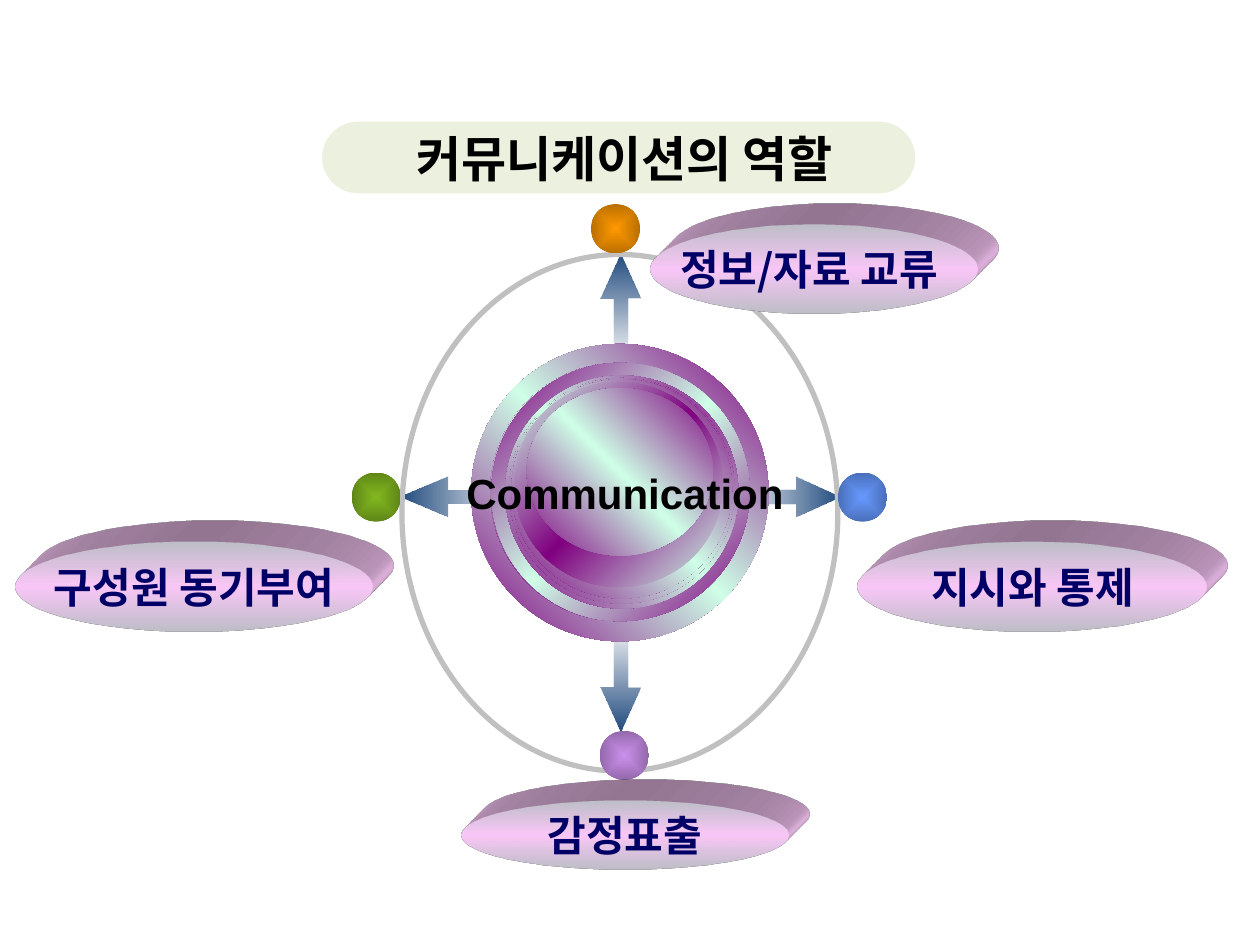
from lxml.etree import SubElement
from pptx import Presentation
from pptx.dml.color import RGBColor
from pptx.enum.shapes import MSO_SHAPE
from pptx.enum.text import MSO_ANCHOR, PP_ALIGN
from pptx.oxml import parse_xml
from pptx.oxml.ns import nsdecls, qn
from pptx.util import Inches, Pt

LATIN_FONT = "Arial"
KOREAN_FONT = "Noto Sans CJK KR"
WHITE = RGBColor(0xFF, 0xFF, 0xFF)
BLACK = RGBColor(0, 0, 0)
NAVY = RGBColor(0, 0, 0x66)
SILVER = RGBColor(0xC0, 0xC0, 0xC0)
PALE_GREEN = RGBColor(0xEB, 0xF1, 0xDE)
ARROW_START = RGBColor(0x1D, 0x45, 0x77)
ARROW_END = RGBColor(0x1F, 0x49, 0x7D)
PURPLE = RGBColor(0x80, 0, 0x80)
MINT = RGBColor(0xCF, 0xFF, 0xE7)
GRAY = RGBColor(0xBD, 0xBE, 0xC7)
PINK = RGBColor(0xF9, 0xC7, 0xF7)
LILAC = RGBColor(0xCB, 0x90, 0xEC)
DARK_LILAC = RGBColor(0x93, 0x68, 0xAB)
BLUE = RGBColor(0x66, 0x99, 0xFF)
DARK_BLUE = RGBColor(0x4A, 0x6F, 0xB9)
ORANGE = RGBColor(0xFF, 0x99, 0)
DARK_ORANGE = RGBColor(0xB9, 0x6F, 0)
GREEN = RGBColor(0x82, 0xB8, 0x20)
DARK_GREEN = RGBColor(0x5E, 0x85, 0x17)


def add_plain(shapes, preset, left, top, width, height):
    shape = shapes.add_shape(
        preset, Inches(left), Inches(top), Inches(width), Inches(height)
    )
    shape.shadow.inherit = False
    shape.fill.background()
    shape.line.fill.background()
    return shape


def fill_gradient(shape, colors, angle=None, clear_start=False):
    stops = ""
    for index, color in enumerate(colors):
        alpha = '<a:alpha val="0"/>' if clear_start and index == 0 else ""
        position = 100000 * index // (len(colors) - 1)
        stops += f'<a:gs pos="{position}"><a:srgbClr val="{color}">{alpha}</a:srgbClr></a:gs>'
    if angle is None:
        course = (
            '<a:path path="shape"><a:fillToRect l="50000" t="50000" '
            'r="50000" b="50000"/></a:path>'
        )
    else:
        course = f'<a:lin ang="{angle * 60000}" scaled="1"/>'
    gradient = parse_xml(
        f'<a:gradFill {nsdecls("a")} rotWithShape="1">'
        f"<a:gsLst>{stops}</a:gsLst>{course}</a:gradFill>"
    )
    properties = shape._element.spPr
    properties.replace(properties.find(qn("a:noFill")), gradient)


def extrude(shape, color):
    properties = shape._element.spPr
    properties.append(parse_xml(
        f'<a:scene3d {nsdecls("a")}><a:camera prst="legacyObliqueTopRight"/>'
        '<a:lightRig rig="legacyFlat3" dir="b"/></a:scene3d>'
    ))
    properties.append(parse_xml(
        f'<a:sp3d {nsdecls("a")} extrusionH="430200" prstMaterial="legacyMatte">'
        '<a:bevelT w="13500" h="13500" prst="angle"/>'
        '<a:bevelB w="13500" h="13500" prst="angle"/>'
        f'<a:extrusionClr><a:srgbClr val="{color}"/></a:extrusionClr></a:sp3d>'
    ))


def write_text(shape, text, size, color, font_name, anchor=MSO_ANCHOR.MIDDLE):
    frame = shape.text_frame
    frame.word_wrap = False
    frame.vertical_anchor = anchor
    paragraph = frame.paragraphs[0]
    paragraph.text = text
    paragraph.alignment = PP_ALIGN.CENTER
    font = paragraph.font
    font.size, font.bold, font.name = Pt(size), True, font_name
    font.color.rgb = color
    SubElement(font._rPr, qn("a:ea"), typeface=font_name)


def add_arrows(shapes, left, top):
    for dx, dy, length, rotation in (
        (1.3, 0.27, 0.87, 270),
        (1.3, 3.19, 0.87, 90),
        (2.61, 1.76, 0.87, 0),
        (-0.02, 1.76, 0.94, 180),
    ):
        arrow = add_plain(
            shapes, MSO_SHAPE.RIGHT_ARROW, left + dx, top + dy, length, 0.32
        )
        arrow.adjustments[0] = 0.35
        arrow.adjustments[1] = 1.11 * length / 0.87
        arrow.rotation = rotation
        fill_gradient(arrow, (ARROW_START, ARROW_END), 0, clear_start=True)


def add_orbit(shapes, left, top, width, height):
    add_arrows(shapes, left, top)
    orbit = add_plain(shapes, MSO_SHAPE.OVAL, left, top, width, height)
    orbit.line.color.rgb = SILVER
    orbit.line.width = Pt(3)
    for dx, dy, center, edge in (
        (1.57, 3.78, LILAC, DARK_LILAC),
        (3.46, 1.73, BLUE, DARK_BLUE),
        (1.5, -0.4, ORANGE, DARK_ORANGE),
        (-0.4, 1.73, GREEN, DARK_GREEN),
    ):
        dot = add_plain(shapes, MSO_SHAPE.OVAL, left + dx, top + dy, 0.39, 0.39)
        fill_gradient(dot, (center, edge))


def add_dial(shapes, left, top, text):
    dial = shapes.add_group_shape().shapes
    mint_band = (PURPLE, MINT, PURPLE)
    purple_band = (MINT, PURPLE, MINT)
    for dx, dy, width, height, colors, angle in (
        (0, 0, 2.36, 2.36, mint_band, 315),
        (0.15, 0.15, 2.05, 2.05, mint_band, 315),
        (0.16, 0.15, 2.05, 2.05, mint_band, 45),
        (0.27, 0.25, 1.85, 1.85, mint_band, 315),
        (0.3, 0.27, 1.79, 1.79, mint_band, 315),
        (0.32, 0.28, 1.75, 1.74, mint_band, 315),
        (0.34, 0.3, 1.66, 1.63, purple_band, 45),
        (0.44, 0.35, 1.48, 1.33, mint_band, 315),
    ):
        ring = add_plain(dial, MSO_SHAPE.OVAL, left + dx, top + dy, width, height)
        fill_gradient(ring, colors, angle)
    caption = dial.add_textbox(
        Inches(left - 0.15), Inches(top + 0.93), Inches(2.74), Inches(0.51)
    )
    write_text(caption, text, 24, BLACK, LATIN_FONT, MSO_ANCHOR.TOP)


def add_role(shapes, left, top, width, height, text):
    role = add_plain(shapes, MSO_SHAPE.OVAL, left, top, width, height)
    fill_gradient(role, (GRAY, PINK, GRAY), 90)
    extrude(role, PINK)
    write_text(role, text, 24, NAVY, KOREAN_FONT)


def add_title(shapes, left, top, width, height, text):
    title = add_plain(
        shapes, MSO_SHAPE.ROUNDED_RECTANGLE, left, top, width, height
    )
    title.adjustments[0] = 0.5
    title.fill.solid()
    title.fill.fore_color.rgb = PALE_GREEN
    title.line.color.rgb = WHITE
    title.line.width = Pt(2.25)
    write_text(title, text, 28, BLACK, KOREAN_FONT)


def main():
    presentation = Presentation()
    presentation.slide_width = Inches(10)
    presentation.slide_height = Inches(7.5)
    shapes = presentation.slides.add_slide(presentation.slide_layouts[6]).shapes
    add_orbit(shapes, 3.19, 2.02, 3.46, 4.1)
    add_dial(shapes, 3.74, 2.73, "Communication")
    add_role(shapes, 5.16, 1.78, 2.6, 0.71, "정보/자료 교류 ")
    add_role(shapes, 6.81, 4.3, 2.77, 0.71, "지시와 통제")
    add_role(shapes, 3.66, 6.35, 2.6, 0.55, "감정표출")
    add_role(shapes, 0.12, 4.3, 2.84, 0.71, "구성원 동기부여")
    add_title(shapes, 2.54, 0.95, 4.74, 0.6, " 커뮤니케이션의 역할")
    presentation.save("out.pptx")


if __name__ == "__main__":
    main()
